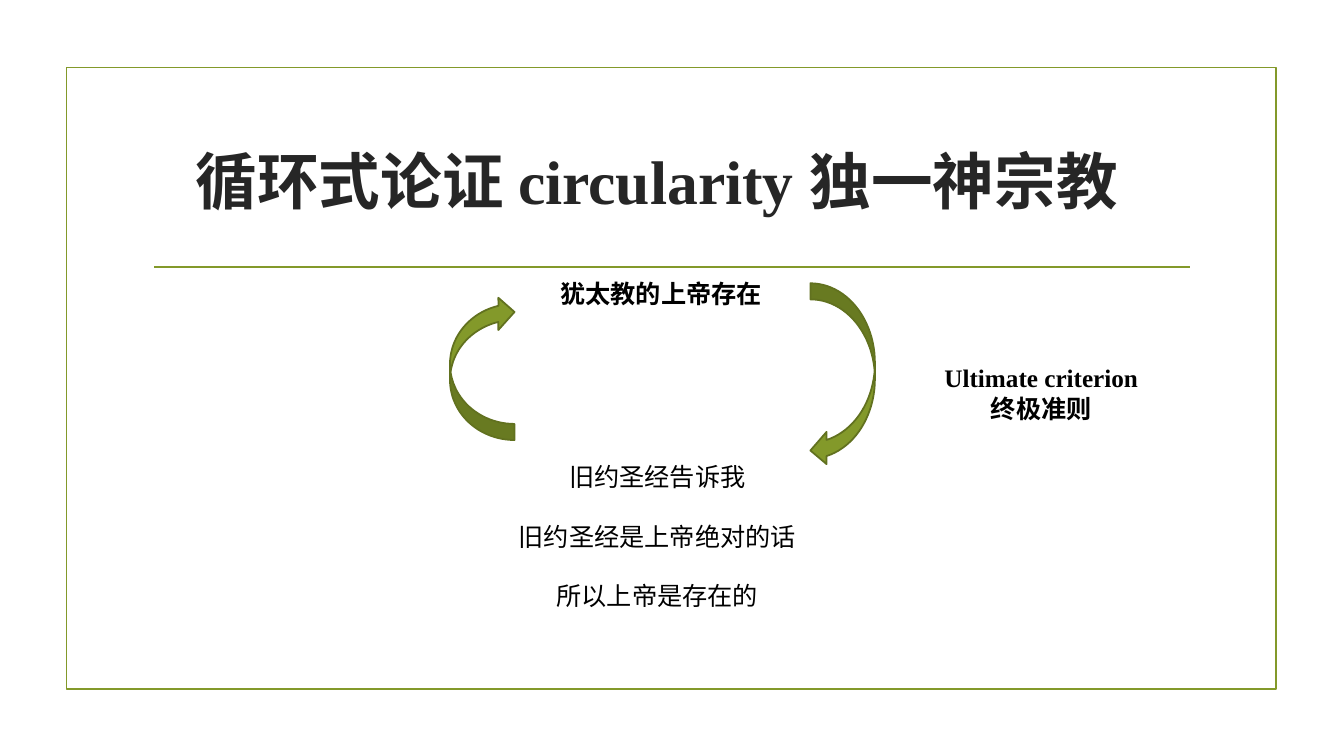
import pptx
import pptx.util
import pptx.dml.color
import pptx.enum.shapes
import pptx.enum.text
import pptx.oxml

Pt = pptx.util.Pt
MSO_SHAPE = pptx.enum.shapes.MSO_SHAPE
PP_ALIGN = pptx.enum.text.PP_ALIGN
ANCHOR = pptx.enum.text.MSO_ANCHOR

# Content: boxes are left, top, width, height in points
COLORS = {"green": "83992A", "dark_green": "61711F", "title": "262626", "text": "000000"}
FONT = "Times New Roman"
LINE_WIDTH = 1.25
TITLE = "循环式论证 circularity 独一神宗教"
TITLE_BOX = (102.2, 77, 756, 103)
FRAME_BOX = (47.5, 48.2, 864, 444.2)
RULE = (110.2, 190.8, 850.3, 190.8)
LABELS = [
    {"lines": ["犹太教的上帝存在"], "box": (393.1, 195.1, 159.8, 29.1),
     "align": PP_ALIGN.LEFT, "bold": True, "gap": 0},
    {"lines": ["Ultimate criterion", "终极准则"], "box": (665.3, 255.6, 157, 50.9),
     "align": PP_ALIGN.CENTER, "bold": True, "gap": 0},
    {"lines": ["旧约圣经告诉我", "旧约圣经是上帝绝对的话", "所以上帝是存在的"],
     "box": (362.2, 326.2, 214.6, 116.6),
     "align": PP_ALIGN.CENTER, "bold": False, "gap": 20.7},
]
ARROWS = [
    {"box": (536.4, 244.8, 131, 46.1), "flipped": False},
    {"box": (293, 239.8, 103, 46.1), "flipped": True},
]


def color(name):
    return pptx.dml.color.RGBColor.from_string(COLORS[name])


def points(values):
    return [Pt(value) for value in values]


def set_all(target, values):
    for name, value in values.items():
        setattr(target, name, value)


def style_line(line, name):
    line.color.rgb = color(name)
    line.width = Pt(LINE_WIDTH)


def write(frame, lines, align, size, bold, color_name, gap=0):
    for index, text in enumerate(lines):
        paragraph = frame.paragraphs[0] if index == 0 else frame.add_paragraph()
        paragraph.alignment = align
        if index and gap:
            paragraph.space_before = Pt(gap)
        run = paragraph.add_run()
        run.text = text
        set_all(run.font, {"name": FONT, "size": Pt(size), "bold": bold})
        run.font.color.rgb = color(color_name)


presentation = pptx.Presentation()
set_all(presentation, {"slide_width": Pt(960), "slide_height": Pt(540)})
slide = presentation.slides.add_slide(presentation.slide_layouts[5])
shapes = slide.shapes

# Frame and rule under the title
frame = shapes.add_shape(MSO_SHAPE.RECTANGLE, *points(FRAME_BOX))
frame.shadow.inherit = False
frame.fill.background()
style_line(frame.line, "green")

rule = shapes.add_connector(pptx.enum.shapes.MSO_CONNECTOR.STRAIGHT, *points(RULE))
style_line(rule.line, "green")
rule._element.spPr.append(pptx.oxml.parse_xml(
    '<a:effectLst xmlns:a="http://schemas.openxmlformats.org/drawingml/2006/main"/>'))

# Title, set slightly left of centre by a wider right inset
title = shapes.title
set_all(title, dict(zip(("left", "top", "width", "height"), points(TITLE_BOX))))
set_all(title.text_frame, {
    "word_wrap": True, "vertical_anchor": ANCHOR.MIDDLE,
    "auto_size": pptx.enum.text.MSO_AUTO_SIZE.NONE, "margin_right": Pt(29.2)})
write(title.text_frame, [TITLE], PP_ALIGN.CENTER, 44, True, "title")

# Circular arrows
for item in ARROWS:
    arrow = shapes.add_shape(MSO_SHAPE.CURVED_DOWN_ARROW, *points(item["box"]))
    arrow.rotation = 90
    arrow.shadow.inherit = False
    arrow.fill.solid()
    arrow.fill.fore_color.rgb = color("green")
    style_line(arrow.line, "dark_green")
    if item["flipped"]:
        for attribute in ("flipH", "flipV"):
            arrow._element.spPr.xfrm.set(attribute, "1")

# Statements around the circle
for label in LABELS:
    box = shapes.add_textbox(*points(label["box"]))
    set_all(box.text_frame, {
        "word_wrap": False, "vertical_anchor": ANCHOR.TOP,
        "auto_size": pptx.enum.text.MSO_AUTO_SIZE.SHAPE_TO_FIT_TEXT})
    write(box.text_frame, label["lines"], label["align"], 18, label["bold"],
          "text", label["gap"])

presentation.save("out.pptx")
